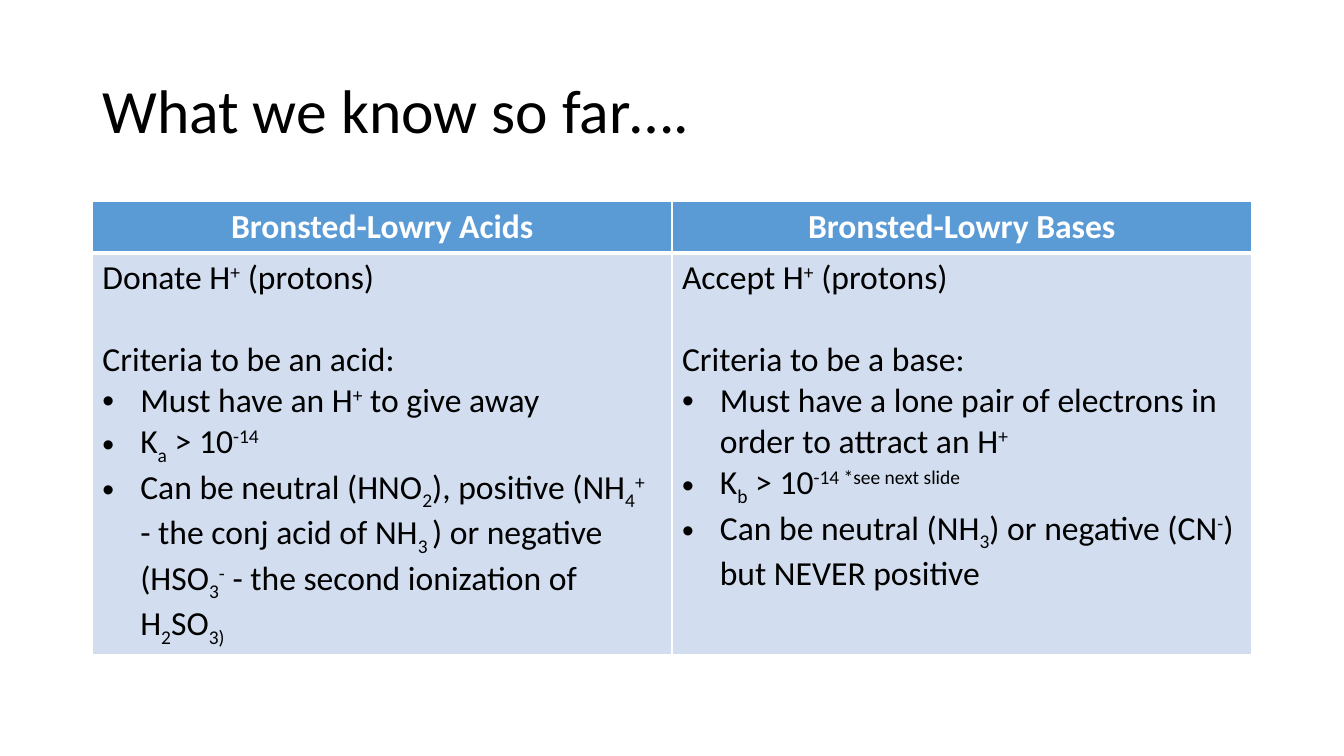
from dataclasses import dataclass

from lxml import etree
from pptx import Presentation
from pptx.dml.color import RGBColor
from pptx.enum.text import MSO_ANCHOR, MSO_AUTO_SIZE, PP_ALIGN
from pptx.oxml.ns import qn
from pptx.util import Pt

LEFT, CENTER = PP_ALIGN.LEFT, PP_ALIGN.CENTER
MIDDLE = MSO_ANCHOR.MIDDLE
NO_AUTOFIT = MSO_AUTO_SIZE.NONE
TITLE_ONLY = 5


@dataclass(frozen=True)
class Theme:
    font: str = "Calibri"
    title_size: int = 44
    body_size: int = 24
    text: RGBColor = RGBColor(0, 0, 0)
    header_text: RGBColor = RGBColor(255, 255, 255)
    header_fill: RGBColor = RGBColor(0x5B, 0x9B, 0xD5)
    body_fill: RGBColor = RGBColor(0xD2, 0xDE, 0xEF)
    border: str = "FFFFFF"


THEME = Theme()
LEFT_EDGE, CONTENT_WIDTH = 66, 828
BULLET_INDENT = 27
CRITERIA_GAP = 29.3
THIN, THICK = 1, 3
BASELINES = {"^": "30000", "_": "-25000"}

# Each paragraph is a list of runs; ^ marks a superscript run, _ a subscript.
COLUMNS = [
    {
        "header": "Bronsted-Lowry Acids",
        "role": ["Donate H", "^+", " (protons)"],
        "criteria": "Criteria to be an acid:",
        "bullets": [
            ["Must have an H", "^+", " to give away"],
            ["K", "_a", " > 10", "^-14"],
            ["Can be neutral (HNO", "_2", "), positive (NH", "_4", "^+",
             " - the conj acid of NH", "_3 ", ") or negative (HSO", "_3", "^-",
             " - the second ionization of H", "_2", "SO", "_3)"],
        ],
    },
    {
        "header": "Bronsted-Lowry Bases",
        "role": ["Accept H", "^+", " (protons)"],
        "criteria": "Criteria to be a base:",
        "bullets": [
            ["Must have a lone pair of electrons in order to attract an H", "^+"],
            ["K", "_b", " > 10", "^-14 *see next slide"],
            ["Can be neutral (NH", "_3", ") or negative (CN", "^-",
             ") but NEVER positive"],
        ],
    },
]


def add_runs(p, runs, size, color, bold=False):
    for text in runs:
        baseline = BASELINES.get(text[0])
        r = p.add_run()
        r.text = text[1:] if baseline else text
        r.font.name = THEME.font
        r.font.size = Pt(size)
        r.font.bold = bold
        r.font.color.rgb = color
        if baseline:
            r._r.get_or_add_rPr().set("baseline", baseline)


def set_bullet(p):
    pPr = p._p.get_or_add_pPr()
    pPr.set("marL", str(Pt(BULLET_INDENT)))
    pPr.set("indent", str(-Pt(BULLET_INDENT)))
    etree.SubElement(pPr, qn("a:buFont"), typeface="Arial")
    etree.SubElement(pPr, qn("a:buChar"), char="•")


def style_cell(cell, fill, top, bottom):
    """Fill a cell and draw its borders, with the given top and bottom widths."""
    tcPr = cell._tc.get_or_add_tcPr()
    for side, width in (("L", THIN), ("R", THIN), ("T", top), ("B", bottom)):
        ln = etree.SubElement(tcPr, qn(f"a:ln{side}"), w=str(Pt(width)))
        solid = etree.SubElement(ln, qn("a:solidFill"))
        etree.SubElement(solid, qn("a:srgbClr"), val=THEME.border)
    cell.fill.solid()
    cell.fill.fore_color.rgb = fill


def fill_header(cell, text):
    style_cell(cell, THEME.header_fill, THIN, THICK)
    p = cell.text_frame.paragraphs[0]
    p.alignment = CENTER
    add_runs(p, [text], THEME.body_size, THEME.header_text, bold=True)


def fill_body(cell, column):
    style_cell(cell, THEME.body_fill, THICK, THIN)
    tf = cell.text_frame
    add_runs(tf.paragraphs[0], column["role"], THEME.body_size, THEME.text)
    p = tf.add_paragraph()
    p.space_before = Pt(CRITERIA_GAP)
    add_runs(p, [column["criteria"]], THEME.body_size, THEME.text)
    for runs in column["bullets"]:
        p = tf.add_paragraph()
        set_bullet(p)
        add_runs(p, runs, THEME.body_size, THEME.text)


def set_title(s, text):
    sp = s.shapes.title
    sp.left, sp.top = Pt(LEFT_EDGE), Pt(28.8)
    sp.width, sp.height = Pt(CONTENT_WIDTH), Pt(104.4)
    tf = sp.text_frame
    tf.auto_size = NO_AUTOFIT
    tf.vertical_anchor = MIDDLE
    p = tf.paragraphs[0]
    p.alignment = LEFT
    p.line_spacing = 0.9
    add_runs(p, [text], THEME.title_size, THEME.text)


def add_comparison(s, columns):
    header_height, body_height = 36, 286
    table = s.shapes.add_table(
        2, len(columns), Pt(LEFT_EDGE), Pt(144),
        Pt(CONTENT_WIDTH), Pt(header_height + body_height)).table
    table.horz_banding = False
    table.rows[0].height = Pt(header_height)
    table.rows[1].height = Pt(body_height)
    for i, column in enumerate(columns):
        fill_header(table.cell(0, i), column["header"])
        fill_body(table.cell(1, i), column)


def main():
    prs = Presentation()
    prs.slide_width, prs.slide_height = Pt(960), Pt(540)
    s = prs.slides.add_slide(prs.slide_layouts[TITLE_ONLY])
    set_title(s, "What we know so far….")
    add_comparison(s, COLUMNS)
    prs.save("out.pptx")


if __name__ == "__main__":
    main()
